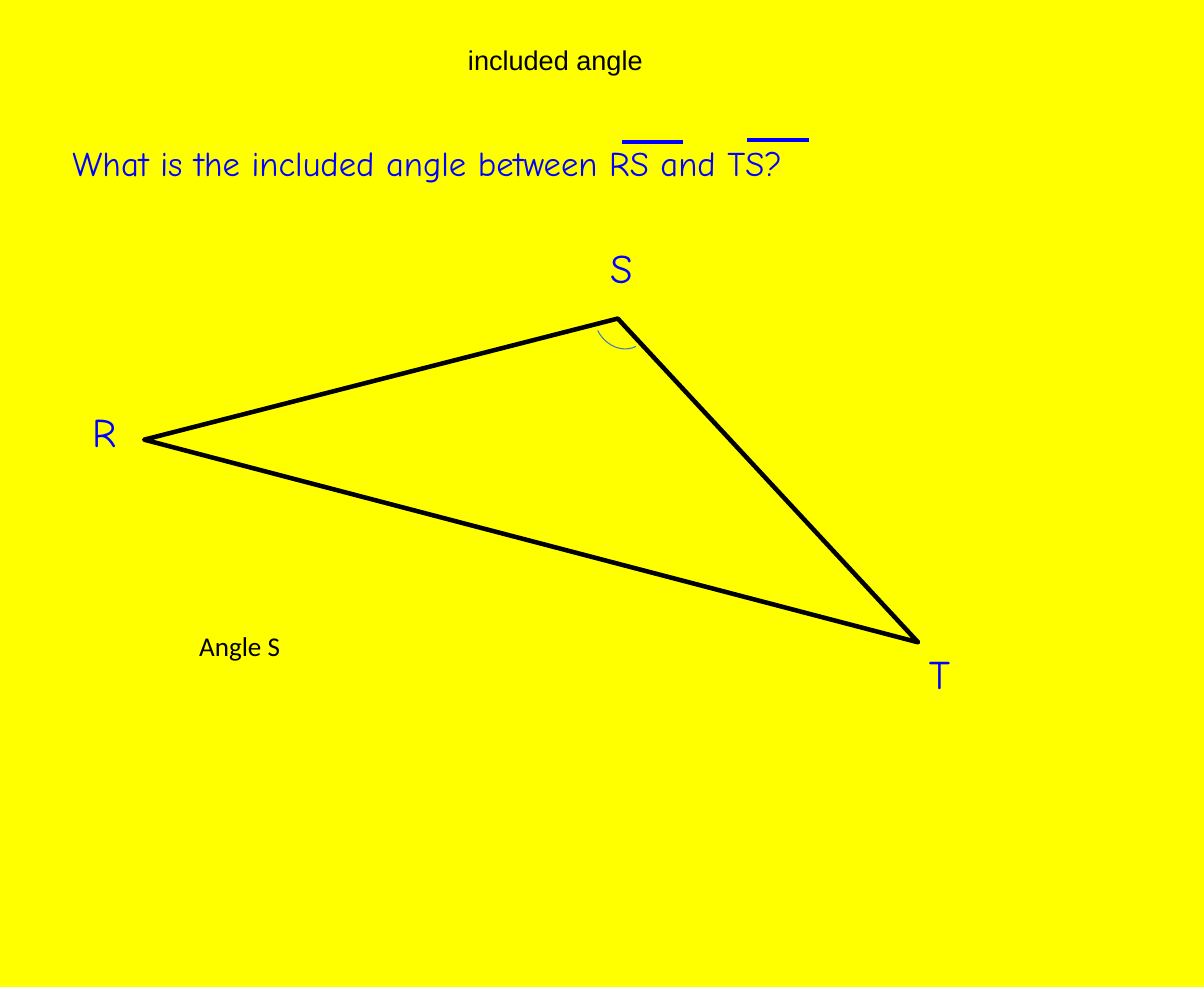
from lxml.etree import SubElement
from pptx import Presentation
from pptx.dml.color import RGBColor
from pptx.enum.shapes import MSO_CONNECTOR, MSO_SHAPE
from pptx.oxml.ns import qn
from pptx.util import Cm, Pt

YELLOW = RGBColor(0xFF, 0xFF, 0x00)
BLUE = RGBColor(0x00, 0x00, 0xFF)
STEEL = RGBColor(0x4B, 0x7E, 0xBC)
BLACK = RGBColor(0x00, 0x00, 0x00)


def add_text(s, text, box, font, size, color):
    tb = s.shapes.add_textbox(*(Cm(v) for v in box))
    tf = tb.text_frame
    tf.word_wrap = True
    tf.text = text
    f = tf.paragraphs[0].runs[0].font
    f.name, f.size = font, Pt(size)
    f.color.rgb = color


def add_question(s, x, y, w, h):
    """Question text, with a bar over each named segment."""
    add_text(s, "What is the included angle between RS and TS?",
             (x, y, w, h), "Comic Neue", 23, BLUE)
    for dx, dy, length in ((13.13, 0.13, 1.42), (16.05, 0.08, 1.47)):
        bar = s.shapes.add_connector(
            MSO_CONNECTOR.STRAIGHT, Cm(x + dx), Cm(y + dy),
            Cm(x + dx + length), Cm(y + dy))
        bar.line.color.rgb = BLUE
        bar.line.width = Pt(3)
        SubElement(bar._element.spPr, qn("a:effectLst"))


def add_triangle(s, x, y, w, h):
    """Triangle RST filling the box, its vertex labels and the arc at S."""
    vertex_s, vertex_t, vertex_r = (x + 11.1, y), (x + w, y + h), (x, y + 2.84)
    start, *others = [(Cm(px), Cm(py))
                      for px, py in (vertex_s, vertex_t, vertex_r)]
    builder = s.shapes.build_freeform(*start)
    builder.add_line_segments(others, close=True)
    triangle = builder.convert_to_shape()
    triangle.shadow.inherit = False
    triangle.fill.background()
    triangle.line.color.rgb = BLACK
    triangle.line.width = Pt(3)

    for name, (px, py), dx, dy in (("R", vertex_r, -1.47, -0.89),
                                   ("S", vertex_s, -0.43, -1.91),
                                   ("T", vertex_t, 0, 0.03)):
        add_text(s, name, (px + dx, py + dy, 1.24, 1.42),
                 "Comic Neue", 27, BLUE)

    px, py = vertex_s
    arc = s.shapes.add_shape(MSO_SHAPE.ARC, Cm(px - 0.54), Cm(py - 0.74),
                             Cm(1.27), Cm(1.47))
    arc.rotation = 153.4
    arc.shadow.inherit = False
    arc.fill.background()
    arc.line.color.rgb = STEEL
    arc.line.width = Pt(0.75)


def main():
    prs = Presentation()
    prs.slide_width, prs.slide_height = Cm(28.22), Cm(23.14)
    s = prs.slides.add_slide(prs.slide_layouts[6])
    s.background.fill.solid()
    s.background.fill.fore_color.rgb = YELLOW

    add_text(s, "included angle", (10.72, 0.89, 5.99, 1.02),
             "Arial", 18, BLACK)
    add_question(s, 1.45, 3.2, 25.7, 1.24)
    add_triangle(s, 3.38, 7.47, 18.14, 7.59)
    add_text(s, "Angle S", (4.42, 14.63, 9.55, 1.02), "Calibri", 18, BLACK)
    prs.save("out.pptx")


if __name__ == "__main__":
    main()
